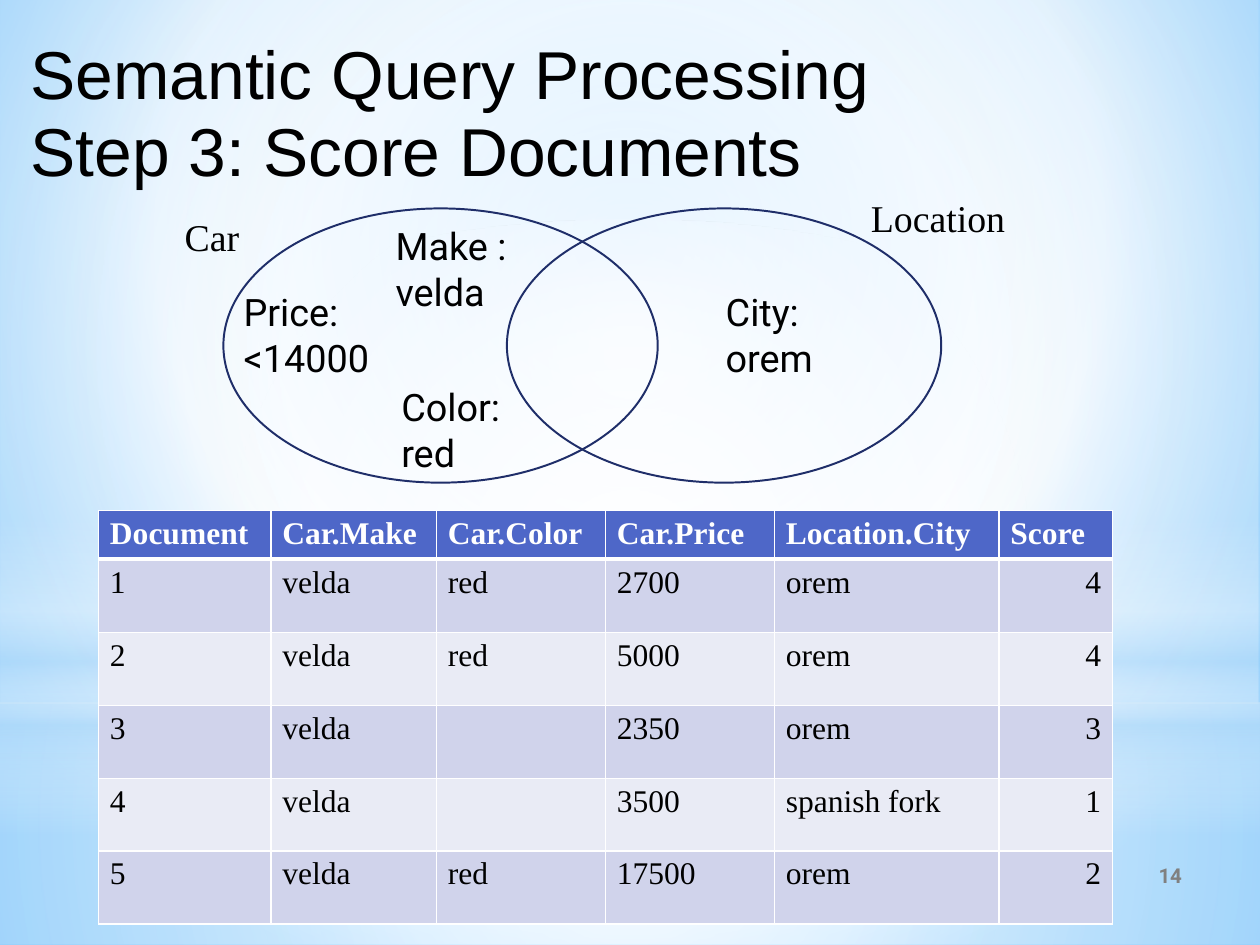
from dataclasses import dataclass
from typing import NamedTuple

from lxml.etree import SubElement as Sub
from pptx import Presentation
from pptx.dml.color import RGBColor as Rgb
from pptx.enum.shapes import MSO_SHAPE as Kind
from pptx.enum.text import MSO_ANCHOR as Anchor, MSO_AUTO_SIZE as Auto, PP_ALIGN as Align
from pptx.oxml import parse_xml
from pptx.oxml.ns import nsdecls, qn
from pptx.util import Pt

WIDE, HIGH = Pt(800.12), Pt(600.12)


@dataclass(frozen=True)
class Theme:
    ink: str = "000000"
    white: str = "FFFFFF"
    grey: str = "808080"
    sky: str = "B4DCFA"
    ring: str = "1F2E69"
    head: str = "4E67C8"
    bands: tuple[str, str] = ("D0D3EB", "E9EBF5")
    serif: str = "Times New Roman"
    sans: str = "Roboto"
    plain: str = "Arial"
    title: float = 43
    label: float = 24
    cell: float = 20
    small: float = 13


THEME = Theme()


class Box(NamedTuple):
    """Place and size in percent of the slide."""
    left: float
    top: float
    width: float
    height: float


class Stop(NamedTuple):
    pos: int
    color: str
    alpha: int = 100


class Layer(NamedTuple):
    box: Box
    kind: Kind
    stops: list[Stop]
    round: bool = True


class Label(NamedTuple):
    text: str
    box: Box
    font: str
    wrap: bool = True


def across(share: float) -> int:
    return round(WIDE * share / 100)


def down(share: float) -> int:
    return round(HIGH * share / 100)


def place(box: Box) -> tuple[int, int, int, int]:
    return across(box.left), down(box.top), across(box.width), down(box.height)


def style(frame, font: str, size: float, color: str, bold: bool = False) -> None:
    for para in frame.paragraphs:
        for run in para.runs:
            run.font.name, run.font.size, run.font.bold = font, Pt(size), bold
            run.font.color.rgb = Rgb.from_string(color)


def shade(fill, props, stops: list[Stop], focus: tuple | None) -> None:
    """Blend the stops around a focus, or straight down without one."""
    fill.solid()
    grad = parse_xml(f'<a:gradFill {nsdecls("a")} rotWithShape="1"/>')
    steps = Sub(grad, qn("a:gsLst"))
    for stop in stops:
        step = Sub(steps, qn("a:gs"), pos=str(stop.pos * 1000))
        tint = Sub(step, qn("a:srgbClr"), val=stop.color)
        Sub(tint, qn("a:alpha"), val=str(stop.alpha * 1000))
    if focus:
        ring = Sub(grad, qn("a:path"), path="circle")
        Sub(ring, qn("a:fillToRect"), {k: str(v * 1000) for k, v in zip("ltrb", focus)})
    else:
        Sub(grad, qn("a:lin"), ang="5400000", scaled="0")
    props.replace(props.find(qn("a:solidFill")), grad)


def add_layer(slide, layer: Layer) -> None:
    shape = slide.shapes.add_shape(layer.kind, *place(layer.box))
    shape.shadow.inherit = False
    shape.line.fill.background()
    focus = (50, 50, 50, 50) if layer.round else None
    shade(shape.fill, shape.element.spPr, layer.stops, focus)


def add_ring(slide, box: Box) -> None:
    ring = slide.shapes.add_shape(Kind.OVAL, *place(box))
    ring.shadow.inherit = False
    ring.fill.background()
    ring.line.color.rgb = Rgb.from_string(THEME.ring)
    ring.line.width = Pt(1.25)


def add_label(slide, label: Label) -> None:
    frame = slide.shapes.add_textbox(*place(label.box)).text_frame
    frame.word_wrap = label.wrap
    frame.auto_size = Auto.SHAPE_TO_FIT_TEXT
    frame.text = label.text
    style(frame, label.font, THEME.label, THEME.ink)


def add_edges(cell, top: float, bottom: float) -> None:
    widths = {"lnL": 1, "lnR": 1, "lnT": top, "lnB": bottom}
    props = cell._tc.get_or_add_tcPr()
    for spot, (name, width) in enumerate(widths.items()):
        props.insert(spot, parse_xml(
            f'<a:{name} {nsdecls("a")} w="{Pt(width)}"><a:solidFill>'
            f'<a:srgbClr val="{THEME.white}"/></a:solidFill></a:{name}>'))


def add_scores(slide, box: Box, cols: list[float], rows: list[list[str]]) -> None:
    table = slide.shapes.add_table(len(rows), len(cols), *place(box)).table
    table.horz_banding = False
    for col, width in zip(table.columns, cols):
        col.width = across(width)
    for r, row in enumerate(rows):
        head = r == 0
        table.rows[r].height = down(5.1 if head else 7.72)
        for c, text in enumerate(row):
            cell = table.cell(r, c)
            cell.text = text
            cell.fill.solid()
            tint = THEME.head if head else THEME.bands[(r - 1) % 2]
            cell.fill.fore_color.rgb = Rgb.from_string(tint)
            style(cell.text_frame, THEME.serif, THEME.cell,
                  THEME.white if head else THEME.ink, head)
            if not head and c == len(cols) - 1:
                cell.text_frame.paragraphs[0].alignment = Align.RIGHT
            add_edges(cell, 3 if r == 1 else 1, 3 if head else 1)


WHITE, SKY = THEME.white, THEME.sky
LAYERS = [
    Layer(Box(0, 74.4, 100, 25.6), Kind.RECTANGLE,
          [Stop(0, WHITE, 91), Stop(37, WHITE, 76), Stop(100, SKY, 79)]),
    Layer(Box(0, 0, 100, 74.4), Kind.RECTANGLE,
          [Stop(0, WHITE, 89), Stop(48, WHITE, 62), Stop(100, SKY, 79)]),
    Layer(Box(0, 54.95, 100, 33.33), Kind.RECTANGLE,
          [Stop(0, WHITE, 0), Stop(29, WHITE, 30), Stop(45, SKY, 40),
           Stop(55, WHITE, 26), Stop(65, SKY, 60), Stop(100, WHITE, 0)], False),
    Layer(Box(0, 23.28, 100, 74.4), Kind.OVAL, [Stop(0, WHITE), Stop(56, WHITE, 0)]),
]
LABELS = [
    Label("Make :\nvelda", Box(30.51, 23.02, 11.25, 10.91), THEME.sans),
    Label("Price:\n<14000", Box(18.45, 29.98, 12.06, 10.91), THEME.sans),
    Label("City:\norem", Box(56.71, 29.98, 10.44, 10.91), THEME.sans),
    Label("Color:\nred", Box(30.96, 40.05, 10.08, 10.91), THEME.sans),
    Label("Location", Box(68.23, 20.02, 12.51, 6), THEME.serif, False),
    Label("Car", Box(13.77, 22.06, 6.21, 6.12), THEME.serif, False),
]
COLS = [13.68, 13.14, 13.41, 13.41, 17.82, 9]
ROWS = [
    ["Document", "Car.Make", "Car.Color", "Car.Price", "Location.City", "Score"],
    ["1", "velda", "red", "2700", "orem", "4"],
    ["2", "velda", "red", "5000", "orem", "4"],
    ["3", "velda", "", "2350", "orem", "3"],
    ["4", "velda", "", "3500", "spanish fork", "1"],
    ["5", "velda", "red", "17500", "orem", "2"],
]


def main() -> None:
    deck = Presentation()
    deck.slide_width, deck.slide_height = WIDE, HIGH
    slide = deck.slides.add_slide(deck.slide_layouts[5])

    # Backdrop
    back = slide.background.fill
    back.solid()
    shade(back, slide.element.find(".//" + qn("p:bgPr")),
          [Stop(0, "9ED5FF"), Stop(60, WHITE), Stop(100, "5BB9FF")], (20, 10, 20, 60))
    for layer in LAYERS:
        add_layer(slide, layer)

    # Title, raised above the backdrop
    title = slide.shapes.title
    title.element.getparent().append(title.element)
    title.left, title.top, title.width, title.height = place(Box(2.43, 3.96, 95.14, 12))
    frame = title.text_frame
    frame.text = "Semantic Query Processing\nStep 3: Score Documents"
    frame.margin_left = frame.margin_right = frame.margin_top = frame.margin_bottom = 0
    frame.vertical_anchor, frame.auto_size, frame.word_wrap = Anchor.TOP, Auto.NONE, True
    for para in frame.paragraphs:
        para.alignment, para.line_spacing = Align.LEFT, 0.95
    style(frame, THEME.plain, THEME.title, THEME.ink)

    # Venn diagram
    for left in (17.73, 40.23):
        add_ring(slide, Box(left, 22.06, 34.47, 29.02))
    for label in LABELS:
        add_label(slide, label)

    # Score table
    add_scores(slide, Box(7.83, 53.99, 80.46, 43.7), COLS, ROWS)

    # Page number
    page = slide.shapes.add_textbox(*place(Box(74.71, 89.98, 19.98, 5.28))).text_frame
    page.text = "14"
    page.word_wrap, page.vertical_anchor = True, Anchor.MIDDLE
    page.paragraphs[0].alignment = Align.RIGHT
    style(page, THEME.sans, THEME.small, THEME.grey, True)

    deck.save("out.pptx")


if __name__ == "__main__":
    main()
